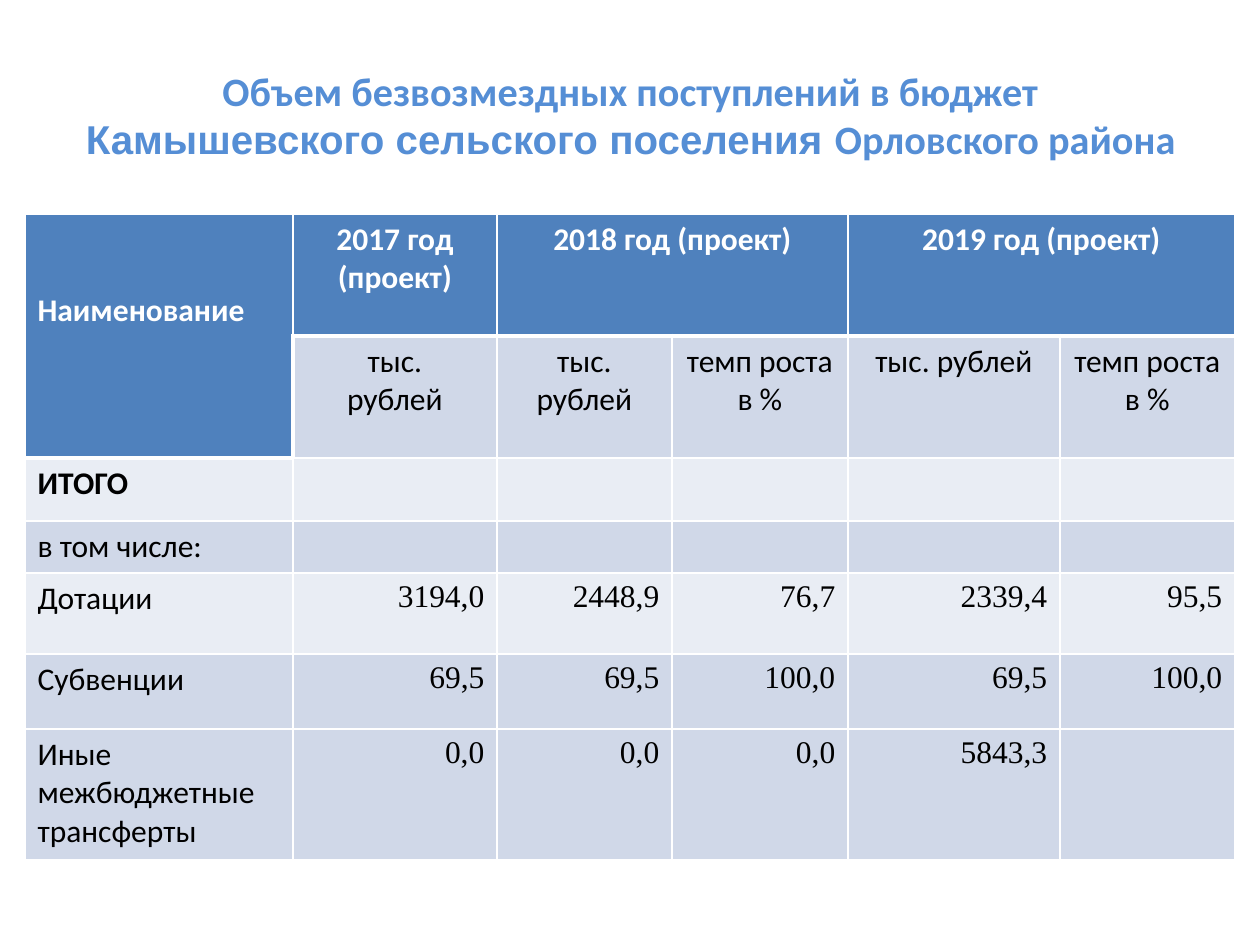
import pptx
import pptx.dml.color
import pptx.enum.text
import pptx.util
from lxml import etree

PX_PER_INCH = 126
DRAWING = "{http://schemas.openxmlformats.org/drawingml/2006/main}"
ALIGN = pptx.enum.text.PP_ALIGN
ANCHOR = pptx.enum.text.MSO_ANCHOR

TITLE_BOX = (64, 45, 1134, 139)
TITLE_RUNS = [
    ("Объем безвозмездных поступлений в бюджет ", "Calibri"),
    ("Камышевского сельского поселения ", "Arial"),
    ("Орловского района", "Calibri"),
]
TABLE_BOX = (25, 214, 1210, 646)
COLUMN_WIDTHS = [268, 204, 175, 176, 212, 175]
ROW_HEIGHTS = [122, 122, 63, 52, 81, 75, 131]
ROW_FILLS = ["4F81BD", "D0D8E8", "E9EDF4", "D0D8E8", "E9EDF4", "D0D8E8", "D0D8E8"]
ROWS = [
    ["Наименование", "2017 год (проект)", "2018 год (проект)", "", "2019 год (проект)", ""],
    ["", "тыс.\nрублей", "тыс. рублей", "темп роста в %", "тыс. рублей", "темп роста в %"],
    ["ИТОГО", "", "", "", "", ""],
    ["в том числе:", "", "", "", "", ""],
    ["Дотации", "3194,0", "2448,9", "76,7", "2339,4", "95,5"],
    ["Субвенции", "69,5", "69,5", "100,0", "69,5", "100,0"],
    ["Иные межбюджетные трансферты", "0,0", "0,0", "0,0", "5843,3", ""],
]
MERGES = [((0, 0), (1, 0)), ((0, 2), (0, 3)), ((0, 4), (0, 5))]
HEADER_ROWS = 2
NAME_TOP_MARGIN = 77


def px(length):
    """Turn pixels into EMU."""
    return pptx.util.Emu(round(length * 914400 / PX_PER_INCH))


def color(value):
    """Turn a hex string into a colour."""
    return pptx.dml.color.RGBColor.from_string(value)


def format_font(font, fill, **values):
    """Set the colour and other attributes of a font."""
    font.color.rgb = color(fill)
    for name, value in values.items():
        setattr(font, name, value)


def set_borders(cell, widths):
    """Draw the white borders of a cell, with widths in points by side."""
    properties = cell._tc.get_or_add_tcPr()
    for side in "LRTB":
        width = str(pptx.util.Pt(widths.get(side, 1)))
        line = etree.SubElement(properties, f"{DRAWING}ln{side}", w=width)
        fill = etree.SubElement(line, f"{DRAWING}solidFill")
        etree.SubElement(fill, f"{DRAWING}srgbClr", val="FFFFFF")


def border_widths(row, column):
    """Return the thick borders around the header of the table."""
    widths = {}
    if row == 0 or (row, column) == (1, 0):
        widths["B"] = 3
    if (row == 1 and column > 0) or (row, column) == (2, 0):
        widths["T"] = 3
    if (row, column) == (1, 1):
        widths["L"] = 3
    return widths


def cell_style(row, column):
    """Return the alignment and font of a cell by its place."""
    is_header = row == 0 or (row == 1 and column == 0)
    is_number = row >= HEADER_ROWS and column > 0
    alignment = ALIGN.LEFT if column == 0 else ALIGN.RIGHT if is_number else ALIGN.CENTER
    font = {
        "fill": "FFFFFF" if is_header else "000000",
        "name": "Times New Roman" if is_number else "Calibri",
        "bold": is_header or (row, column) == (2, 0),
        "size": pptx.util.Pt(18),
    }
    return alignment, font


def add_title(slide, box):
    """Add the centred title in three runs."""
    frame = slide.shapes.add_textbox(*map(px, box)).text_frame
    frame.word_wrap = True
    frame.vertical_anchor = ANCHOR.MIDDLE
    paragraph = frame.paragraphs[0]
    paragraph.alignment = ALIGN.CENTER
    for text, name in TITLE_RUNS:
        run = paragraph.add_run()
        run.text = text
        format_font(run.font, "558ED5", name=name, size=pptx.util.Pt(23), bold=True)


def fill_cell(cell, row, column):
    """Write and format one cell of the table."""
    set_borders(cell, border_widths(row, column))
    cell.fill.solid()
    cell.fill.fore_color.rgb = color(ROW_FILLS[row])
    cell.text = ROWS[row][column]
    alignment, font = cell_style(row, column)
    for paragraph in cell.text_frame.paragraphs:
        paragraph.alignment = alignment
        format_font(paragraph.font, **font)
        for run in paragraph.runs:
            format_font(run.font, **font)


def add_budget_table(slide, box):
    """Add the table of receipts by year."""
    shape = slide.shapes.add_table(len(ROWS), len(COLUMN_WIDTHS), *map(px, box))
    table = shape.table
    table.first_row = table.horz_banding = False
    for column, width in zip(table.columns, COLUMN_WIDTHS):
        column.width = px(width)
    for row, height in zip(table.rows, ROW_HEIGHTS):
        row.height = px(height)
    for row in range(len(ROWS)):
        for column in range(len(COLUMN_WIDTHS)):
            fill_cell(table.cell(row, column), row, column)
    for first, last in MERGES:
        table.cell(*first).merge(table.cell(*last))
    table.cell(0, 0).margin_top = px(NAME_TOP_MARGIN)


def main():
    """Build the slide and save it."""
    presentation = pptx.Presentation()
    presentation.slide_width = px(1260)
    presentation.slide_height = px(945)
    slide = presentation.slides.add_slide(presentation.slide_layouts[6])
    add_title(slide, TITLE_BOX)
    add_budget_table(slide, TABLE_BOX)
    presentation.save("out.pptx")


if __name__ == "__main__":
    main()
